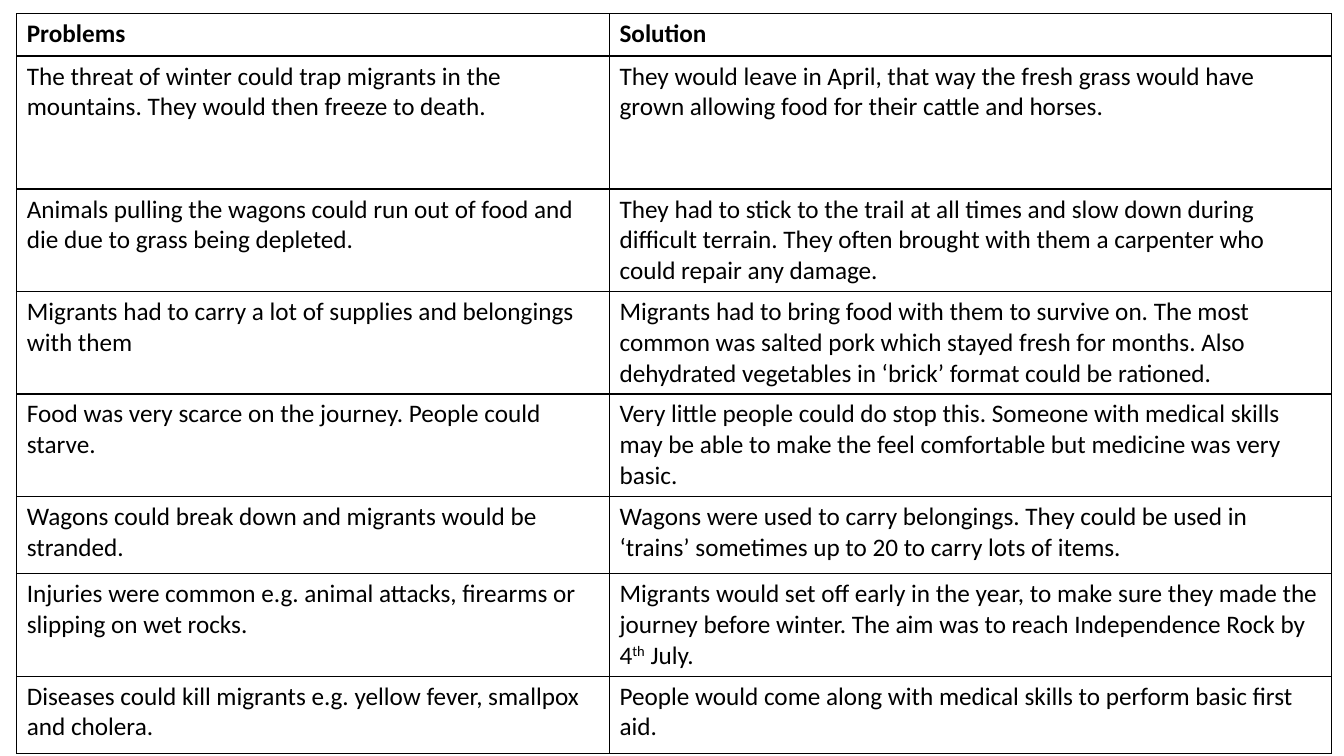
import pptx
import pptx.dml.color
import pptx.oxml
import pptx.oxml.ns
import pptx.util

Pt = pptx.util.Pt

HEADINGS = ("Problems", "Solution")
ROWS = [
    (95, "The threat of winter could trap migrants in the mountains. They would then freeze to death.",
     "They would leave in April, that way the fresh grass would have grown allowing food for their cattle and horses."),
    (73.2, "Animals pulling the wagons could run out of food and die due to grass being depleted.",
     "They had to stick to the trail at all times and slow down during difficult terrain. "
     "They often brought with them a carpenter who could repair any damage."),
    (73.2, "Migrants had to carry a lot of supplies and belongings with them",
     "Migrants had to bring food with them to survive on. The most common was salted pork which stayed fresh "
     "for months. Also dehydrated vegetables in ‘brick’ format could be rationed."),
    (73.2, "Food was very scarce on the journey. People could starve.",
     "Very little people could do stop this. Someone with medical skills may be able to make the feel "
     "comfortable but medicine was very basic."),
    (55.2, "Wagons could break down and migrants would be stranded.",
     "Wagons were used to carry belongings. They could be used in ‘trains’ sometimes up to 20 to carry lots of items."),
    (73.2, "Injuries were common e.g. animal attacks, firearms or slipping on wet rocks.",
     "Migrants would set off early in the year, to make sure they made the journey before winter. "
     "The aim was to reach Independence Rock by 4^th^ July."),
    (55.2, "Diseases could kill migrants e.g. yellow fever, smallpox and cholera.",
     "People would come along with medical skills to perform basic first aid."),
]


def colour(value):
    return pptx.dml.color.RGBColor.from_string(value)


class Page:
    ink = "000000"
    paper = "FFFFFF"
    font = {"name": "Calibri", "size": Pt(18)}

    def __init__(self, deck):
        self.page = deck.slides.add_slide(deck.slide_layouts[6])

    def text(self, paragraph, words, bold):
        for position, part in enumerate(words.split("^")):
            span = paragraph.add_run()
            span.text = part
            for key, value in {**self.font, "bold": bold}.items():
                setattr(span.font, key, value)
            span.font.color.rgb = colour(self.ink)
            if position % 2:
                span._r.get_or_add_rPr().set("baseline", "30000")

    def border(self, cell):
        properties = cell._tc.get_or_add_tcPr()
        for side in ("lnL", "lnR", "lnT", "lnB"):
            properties.append(pptx.oxml.parse_xml(
                f'<a:{side} {pptx.oxml.ns.nsdecls("a")} w="{Pt(1)}"><a:solidFill>'
                f'<a:srgbClr val="{self.ink}"/></a:solidFill></a:{side}>'))

    def table(self, left, top, widths, heights, lines):
        frame = self.page.shapes.add_table(
            len(heights), len(widths), Pt(left), Pt(top), Pt(sum(widths)), Pt(sum(heights)))
        table = frame.table
        table.first_row = table.horz_banding = False
        for column, width in zip(table.columns, widths):
            column.width = Pt(width)
        for row, height, line in zip(table.rows, heights, lines):
            row.height = Pt(height)
            for cell, words in zip(row.cells, line):
                self.border(cell)
                cell.fill.solid()
                cell.fill.fore_color.rgb = colour(self.paper)
                self.text(cell.text_frame.paragraphs[0], words, line is HEADINGS)


def main():
    deck = pptx.Presentation()
    deck.slide_width, deck.slide_height = Pt(960), Pt(540)
    Page(deck).table(
        12, 9.8, (423.4, 515.5),
        [30.2] + [row[0] for row in ROWS],
        [HEADINGS] + [row[1:] for row in ROWS])
    deck.save("out.pptx")


if __name__ == "__main__":
    main()
